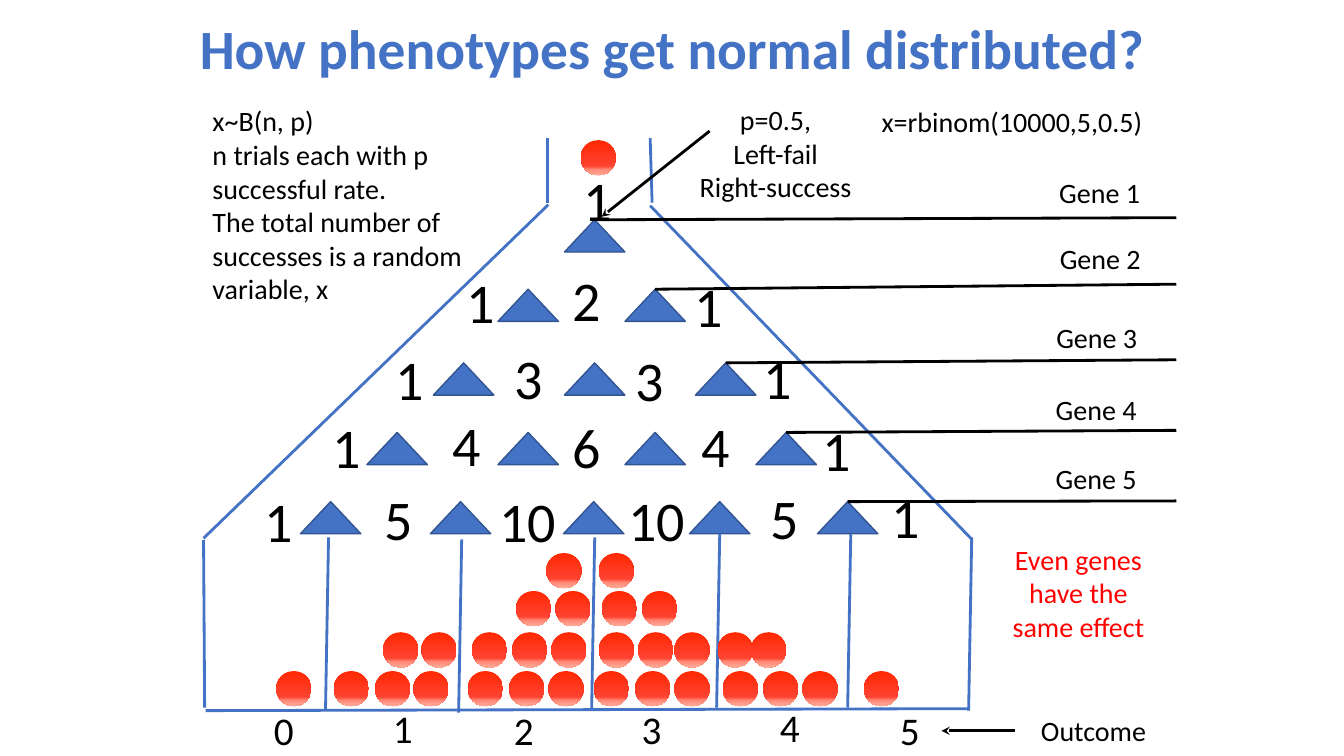
from lxml import etree
from pptx import Presentation
from pptx.dml.color import RGBColor
from pptx.enum import shapes, text
from pptx.oxml import ns
from pptx.util import Pt

# Content, with places in points
TITLE = "How phenotypes get normal distributed?"
NOTES = [  # lines, box, format
    (["x~B(n, p)", "n trials each with p successful rate.",
      "The total number of successes is a random variable, x"],
     (144.7, 70.6, 208, 152.6), {"align": "LEFT"}),
    (["p=0.5,", "Left-fail", "Right-success"], (483.8, 69.8, 140.4, 80), {}),
    (["Outcome"], (725, 506.2, 112.3, 31.7), {}),
    (["x=rbinom(10000,5,0.5)"], (607.7, 71.3, 230.4, 31.7), {}),
    (["Even genes have the same effect"], (714.2, 383.8, 112.3, 80),
     {"color": "red"}),
]
PEGS = [  # top, lefts
    (157, [403.2]),
    (206.6, [355.7, 446.4]),
    (259.2, [309.6, 403.2, 496.8]),
    (308.9, [262.1, 355.7, 446.4, 540]),
    (358.3, [214.6, 307.4, 402.5, 492.5, 583.9]),
]
COUNTS = [  # number, centre, top
    [(1, 427.3, 114.5)],
    [(1, 343.1, 187.9), (2, 419.4, 185.8), (1, 506.5, 190.1)],
    [(1, 292.7, 242.6), (3, 377.7, 241.9), (3, 464.1, 243.4),
     (1, 555.5, 241.9)],
    [(1, 247.3, 290.9), (4, 333, 289.4), (6, 419.4, 290.9),
     (4, 510.9, 290.2), (1, 597.3, 293)],
    [(1, 199.1, 344.2), (5, 284.8, 342.7), (10, 376.9, 344.2),
     (10, 469.1, 343.4), (5, 560.5, 342), (1, 646.9, 341.3)],
]
BALLS = [  # top, lefts
    (100.1, [414.7]),
    (479.3, [197.3, 238.3, 267.8, 295.2, 334.1, 363.6, 391.7, 424.1, 453.6,
             481.7, 516.2, 545, 573.1, 617]),
    (451.6, [273.6, 301, 337, 365.8, 393.8, 427.7, 455.8, 481.7, 512.6,
             536.4]),
    (422.1, [368.6, 396.7, 429.8, 458.6]),
    (395, [390.2, 427.7]),
]
GENES = [  # line end height, label centre, label top
    (155.5, 785.5, 121.7), (203, 785.9, 169.2), (257, 783.4, 225.4),
    (307.4, 783, 276.5), (357.8, 783, 326.2),
]
BINS = [  # centre, top of the outcome numbers
    (202.7, 501.1), (287.7, 499.7), (374.1, 501.1), (465.5, 500.4),
    (564.1, 499), (649.8, 501.1),
]
WALLS = [
    (391, 98.6, 391, 144.7), (464.4, 98.6, 465.8, 144.7),
    (391.7, 146.2, 145.4, 384.5), (691.9, 506.2, 146.9, 507.6),
    (464.4, 146.9, 694.1, 385.2), (145.4, 385.9, 146.2, 505.4),
    (694.1, 383.8, 691.9, 507.6),
]
SPLITS = [(234.7, 383.8), (329.8, 385.2), (424.8, 383.8), (514.1, 381.6),
          (607.7, 381.6)]
ARROWS = [(506.9, 93.6, 429.8, 154.8), (725, 522, 672.5, 522)]

THEME = {
    "font": "Calibri", "blue": "4472C4", "edge": "325491", "black": "000000",
    "red": "FF0000", "title": 39.6, "count": 40, "bin": 28, "note": 20,
    "ball": [(0, "FF2802"), (74, "FF4331"), (83, "FF8976"), (100, "FFAA99")],
}
PEG_W, PEG_H, BALL_D, GENE_X = 43.2, 23, 25.2, 840.2

prs = Presentation()
prs.slide_width, prs.slide_height = Pt(960), Pt(540)
slide = prs.slides.add_slide(prs.slide_layouts[5])


def tint(name):
    return RGBColor.from_string(THEME[name])


def write(lines, box, size="note", color="black", align="CENTER",
          bold=False, shape=None, space=None):
    pos = [Pt(v) for v in box]
    if shape is None:
        shape = slide.shapes.add_textbox(*pos)
        shape.text_frame.auto_size = text.MSO_AUTO_SIZE.SHAPE_TO_FIT_TEXT
    else:
        shape.left, shape.top, shape.width, shape.height = pos
        shape.text_frame.auto_size = text.MSO_AUTO_SIZE.NONE
        shape.text_frame.vertical_anchor = text.MSO_ANCHOR.MIDDLE
    frame = shape.text_frame
    frame.word_wrap = True
    for i, line in enumerate(lines):
        para = frame.add_paragraph() if i else frame.paragraphs[0]
        para.alignment = text.PP_ALIGN[align]
        if space:
            para.line_spacing = space
        run = para.add_run()
        run.text = line
        run.font.name, run.font.size = THEME["font"], Pt(THEME[size])
        run.font.bold, run.font.color.rgb = bold, tint(color)


def label(word, mid, top, width, height, size):
    write([word], (mid - width / 2, top, width, height), size=size)


def draw(ends, color="blue", arrow=False):
    line = slide.shapes.add_connector(
        shapes.MSO_CONNECTOR.STRAIGHT, *[Pt(v) for v in ends])
    line.line.color.rgb, line.line.width = tint(color), Pt(2)
    if arrow:
        etree.SubElement(line.line._get_or_add_ln(), ns.qn("a:tailEnd"),
                         type="stealth")
    etree.SubElement(line._element.spPr, ns.qn("a:effectLst"))


def place(kind, *box):
    shape = slide.shapes.add_shape(kind, *[Pt(v) for v in box])
    shape.shadow.inherit = False
    return shape


def peg(left, top):
    shape = place(shapes.MSO_SHAPE.ISOSCELES_TRIANGLE, left, top, PEG_W, PEG_H)
    shape.fill.solid()
    shape.fill.fore_color.rgb = tint("blue")
    shape.line.color.rgb, shape.line.width = tint("edge"), Pt(1)


def ball(left, top):
    shape = place(shapes.MSO_SHAPE.OVAL, left, top, BALL_D, BALL_D)
    shape.line.fill.background()
    shape.fill.gradient()
    shape.fill.gradient_angle = 270
    stops = shape._element.spPr.find(".//" + ns.qn("a:gsLst"))
    for old in list(stops):
        stops.remove(old)
    for part, color in THEME["ball"]:
        stop = etree.SubElement(stops, ns.qn("a:gs"), pos=str(part * 1000))
        etree.SubElement(stop, ns.qn("a:srgbClr"), val=color)


# Title
write([TITLE], (120.2, 0, 720, 74.2), size="title", color="blue", bold=True,
      shape=slide.shapes.title, space=0.9)

# Board: walls, pegs, bin dividers
for wall in WALLS:
    draw(wall)
for top, lefts in PEGS:
    for left in lefts:
        peg(left, top)
for x, y in SPLITS:
    draw((x, y, x - 2.2, y + 123.8))

# Balls
for top, lefts in BALLS:
    for left in lefts:
        ball(left, top)

# Path counts
for row in COUNTS:
    for count, mid, top in row:
        label(str(count), mid, top, 58 if count > 9 else 45.4, 55.4, "count")

# Gene lines run from the tip of the last peg in each row
for i, ((top, lefts), (end, mid, high)) in enumerate(zip(PEGS, GENES), 1):
    draw((GENE_X, end, lefts[-1] + PEG_W / 2, top), color="black")
    label(f"Gene {i}", mid, high, 100, 31.7, "note")

# Outcomes, arrows and notes
for i, (mid, top) in enumerate(BINS):
    label(str(i), mid, top, 45.4, 41, "bin")
for ends in ARROWS:
    draw(ends, color="black", arrow=True)
for lines, box, form in NOTES:
    write(lines, box, **form)

prs.save("out.pptx")
